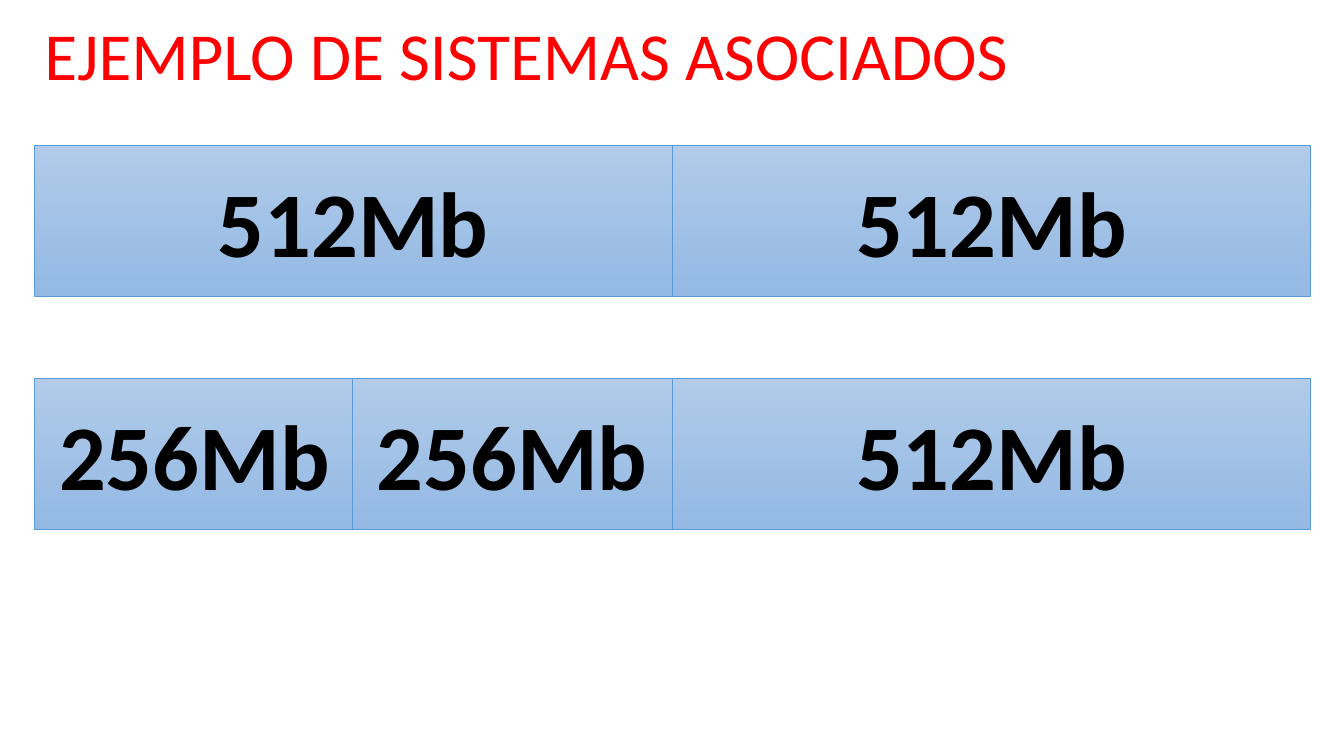
"""Build a slide showing memory split into associated blocks."""
from pptx import Presentation
from pptx.dml.color import RGBColor
from pptx.enum.shapes import MSO_SHAPE
from pptx.enum.text import MSO_ANCHOR, PP_ALIGN
from pptx.util import Inches, Pt

TITLE = "EJEMPLO DE SISTEMAS ASOCIADOS"
MEMORY_ROWS = [
    (1.44, [("512Mb", 0.34, 6.33), ("512Mb", 6.67, 6.33)]),
    (3.75, [("256Mb", 0.34, 3.18), ("256Mb", 3.49, 3.18), ("512Mb", 6.67, 6.33)]),
]
BLOCK_HEIGHT = 1.5
COLORS = {"title": "FF0000", "text": "000000", "line": "5B9BD5",
          "top": "B1CBE9", "bottom": "93B9E4"}
TITLE_FONT = {"name": "Calibri", "size": Pt(48), "bold": False}
BLOCK_FONT = {"name": "Calibri", "size": Pt(66), "bold": True}


def rgb(name):
    """Return the named colour."""
    return RGBColor.from_string(COLORS[name])


def write(sp, text, font, color, align, anchor):
    """Put one formatted paragraph in a shape."""
    tf = sp.text_frame
    tf.word_wrap = True
    tf.vertical_anchor = anchor
    p = tf.paragraphs[0]
    p.alignment = align
    r = p.add_run()
    r.text = text
    for key, value in font.items():
        setattr(r.font, key, value)
    r.font.color.rgb = rgb(color)


def add_block(slide, text, left, top, width):
    """Add one memory block with a vertical gradient."""
    sp = slide.shapes.add_shape(MSO_SHAPE.RECTANGLE, Inches(left), Inches(top),
                                Inches(width), Inches(BLOCK_HEIGHT))
    sp.shadow.inherit = False
    sp.fill.gradient()
    sp.fill.gradient_angle = 270
    for stop, name in zip(sp.fill.gradient_stops, ("top", "bottom")):
        stop.color.rgb = rgb(name)
    sp.line.color.rgb = rgb("line")
    sp.line.width = Pt(0.5)
    write(sp, text, BLOCK_FONT, "text", PP_ALIGN.CENTER, MSO_ANCHOR.MIDDLE)


def main():
    """Create and save the presentation."""
    prs = Presentation()
    prs.slide_width, prs.slide_height = Inches(13.33), Inches(7.5)
    slide = prs.slides.add_slide(prs.slide_layouts[5])
    title = slide.shapes.title
    title.left, title.top = Inches(0.34), Inches(0.08)
    title.width, title.height = Inches(11.32), Inches(0.91)
    write(title, TITLE, TITLE_FONT, "title", PP_ALIGN.LEFT, MSO_ANCHOR.TOP)
    for top, blocks in MEMORY_ROWS:
        for text, left, width in blocks:
            add_block(slide, text, left, top, width)
    prs.save("out.pptx")


if __name__ == "__main__":
    main()
